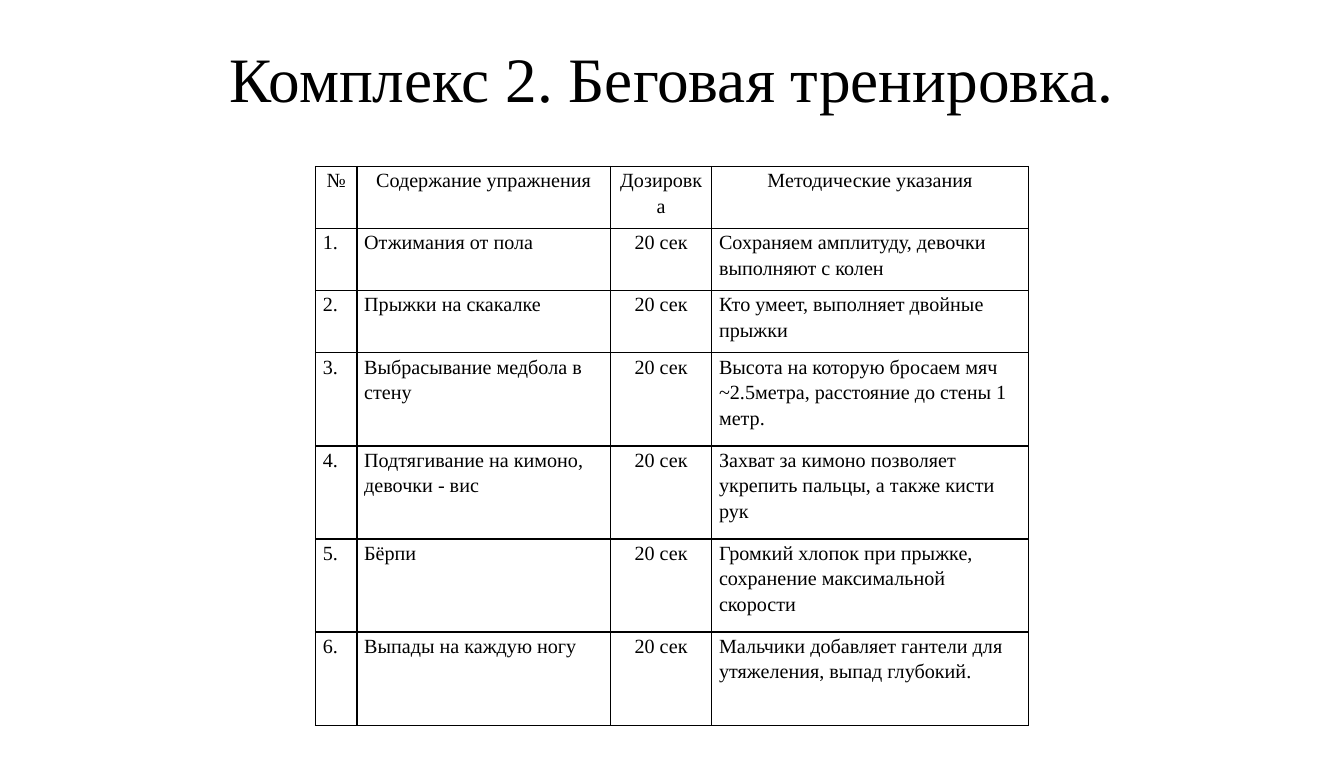
from lxml.etree import SubElement
from pptx import Presentation
from pptx.dml.color import RGBColor
from pptx.enum.text import MSO_ANCHOR, PP_ALIGN
from pptx.oxml.ns import qn
from pptx.util import Inches, Pt

SLIDE_WIDTH, SLIDE_HEIGHT = Inches(12.99), Inches(7.48)
FONT = "Times New Roman"
COLORS = {"text": "000000", "border": "000000"}
COLUMN_WIDTHS = [0.4, 2.45, 0.98, 3.06]
ROW_UNIT = 0.3
ROW_UNITS = [2, 2, 2, 3, 3, 3, 3]
DOSAGE_COLUMN = 2
DOSAGE = "20 сек"
HEADINGS = ["№", "Содержание упражнения", "Дозировка", "Методические указания"]
EXERCISES = [
    ("Отжимания от пола", "Сохраняем амплитуду, девочки выполняют с колен"),
    ("Прыжки на скакалке", "Кто умеет, выполняет двойные прыжки"),
    ("Выбрасывание медбола в стену",
     "Высота на которую бросаем мяч ~2.5метра, расстояние до стены 1 метр."),
    ("Подтягивание на кимоно, девочки - вис",
     "Захват за кимоно позволяет укрепить пальцы, а также кисти рук"),
    ("Бёрпи", "Громкий хлопок при прыжке, сохранение максимальной скорости"),
    ("Выпады на каждую ногу",
     "Мальчики добавляет гантели для утяжеления, выпад глубокий."),
]


def add_text(frame, text, size, align):
    paragraph = frame.paragraphs[0]
    paragraph.alignment = align
    run = paragraph.add_run()
    run.text = text
    run.font.name = FONT
    run.font.size = Pt(size)
    run.font.color.rgb = RGBColor.from_string(COLORS["text"])
    return paragraph


def set_title(slide, text):
    title = slide.shapes.title
    title.left, title.top = int(SLIDE_WIDTH * 0.05), Inches(0.12)
    title.width, title.height = int(SLIDE_WIDTH * 0.9), Inches(1.25)
    frame = title.text_frame
    frame.word_wrap = True
    frame.vertical_anchor = MSO_ANCHOR.MIDDLE
    frame.margin_left = frame.margin_right = Inches(0.12)
    frame.margin_top = frame.margin_bottom = Inches(0.06)
    add_text(frame, text, 44, PP_ALIGN.CENTER)


def set_borders(cell):
    properties = cell._tc.get_or_add_tcPr()
    for position, side in enumerate(("lnL", "lnR", "lnT", "lnB")):
        line = SubElement(properties, qn(f"a:{side}"), w=str(Pt(1)))
        fill = SubElement(line, qn("a:solidFill"))
        SubElement(fill, qn("a:srgbClr"), val=COLORS["border"])
        properties.insert(position, line)


def fill_cell(cell, text, align):
    cell.margin_left = cell.margin_right = Inches(0.07)
    cell.margin_top = cell.margin_bottom = 0
    cell.vertical_anchor = MSO_ANCHOR.TOP
    cell.fill.background()
    set_borders(cell)
    add_text(cell.text_frame, text, 14, align).line_spacing = 1.15


def add_exercise_table(slide):
    records = [HEADINGS] + [
        [f"{number}.", exercise, DOSAGE, guidance]
        for number, (exercise, guidance) in enumerate(EXERCISES, 1)
    ]
    width = Inches(sum(COLUMN_WIDTHS))
    height = Inches(ROW_UNIT * sum(ROW_UNITS))
    table = slide.shapes.add_table(
        len(records), len(HEADINGS),
        (SLIDE_WIDTH - width) // 2, Inches(1.61), width, height,
    ).table
    table.first_row = table.horz_banding = False
    for column, column_width in zip(table.columns, COLUMN_WIDTHS):
        column.width = Inches(column_width)
    for row, units in zip(table.rows, ROW_UNITS):
        row.height = Inches(ROW_UNIT * units)
    for row_index, record in enumerate(records):
        for column_index, text in enumerate(record):
            centered = row_index == 0 or column_index == DOSAGE_COLUMN
            align = PP_ALIGN.CENTER if centered else PP_ALIGN.LEFT
            fill_cell(table.cell(row_index, column_index), text, align)


def main():
    presentation = Presentation()
    presentation.slide_width, presentation.slide_height = SLIDE_WIDTH, SLIDE_HEIGHT
    slide = presentation.slides.add_slide(presentation.slide_layouts[5])
    set_title(slide, "Комплекс 2. Беговая тренировка.")
    add_exercise_table(slide)
    presentation.save("out.pptx")


if __name__ == "__main__":
    main()
